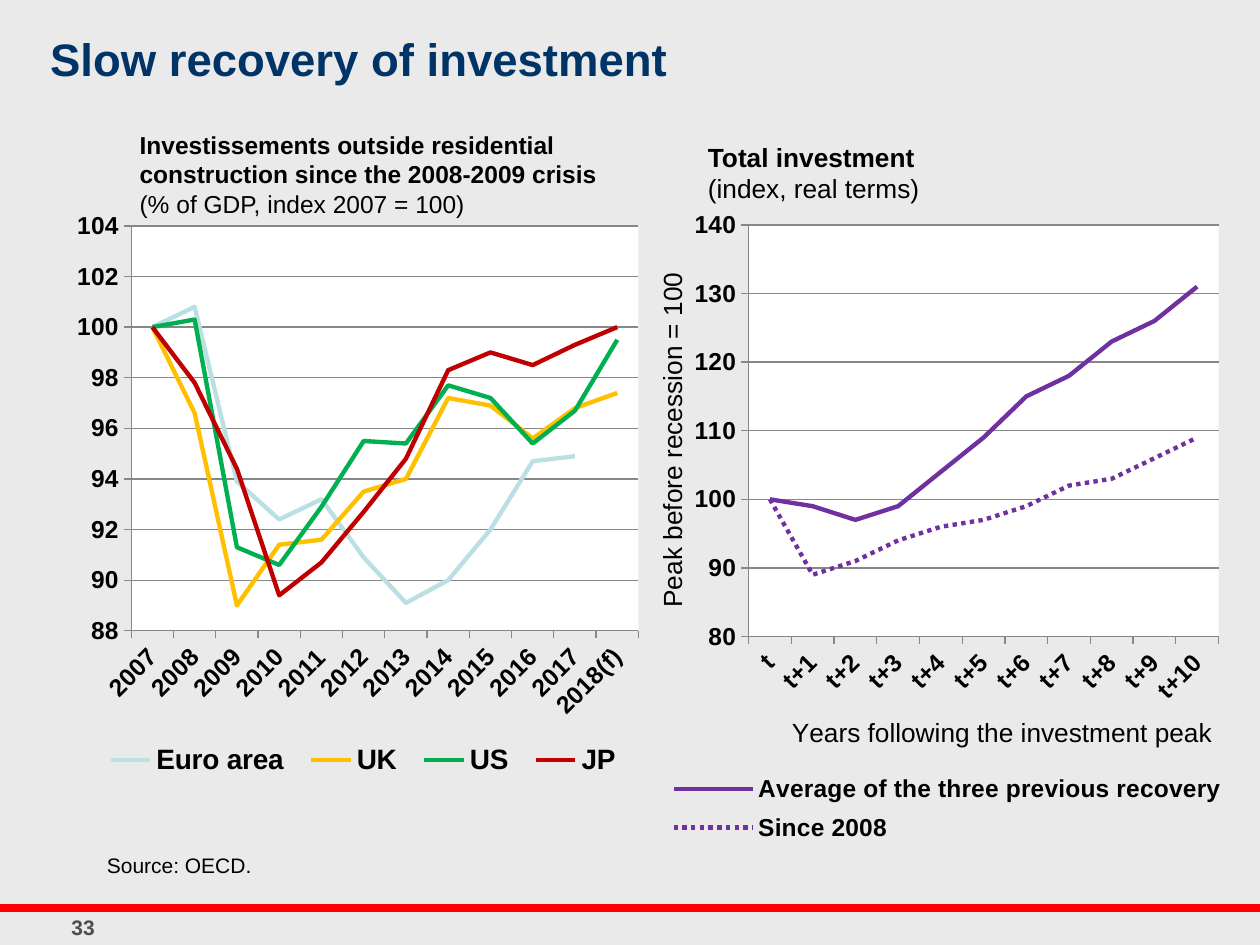
from lxml import etree
from pptx import Presentation
from pptx import util as u
from pptx.chart import data
from pptx.dml import color
from pptx.enum import chart as ch, dml, shapes, text
from pptx.oxml import parse_xml
from pptx.oxml.ns import nsdecls, qn


def rgb(hex_code):
    return color.RGBColor.from_string(hex_code)


def place(part, index, **fractions):
    old = part.find(qn("c:layout"))
    if old is not None:
        part.remove(old)
    layout = etree.Element(qn("c:layout"))
    manual = etree.SubElement(layout, qn("c:manualLayout"))
    settings = {"xMode": "edge", "yMode": "edge", **fractions}
    if part.tag == qn("c:plotArea"):
        settings = {"layoutTarget": "inner", **settings}
    for name, value in settings.items():
        etree.SubElement(manual, qn(f"c:{name}")).set("val", str(value))
    part.insert(index, layout)


class SlideBuilder:
    FONT = "Arial"
    INK = "000000"
    GRID = "878787"

    def __init__(self, slide, background):
        self.slide = slide
        slide.background.fill.solid()
        slide.background.fill.fore_color.rgb = rgb(background)

    def style(self, font, size, bold=False, ink=INK):
        font.name, font.size, font.bold = self.FONT, u.Pt(size), bold
        font.color.rgb = rgb(ink)

    def label(self, box, lines, size, ink=INK, align=text.PP_ALIGN.LEFT,
              anchor=text.MSO_ANCHOR.TOP):
        frame = self.slide.shapes.add_textbox(*map(u.Inches, box)).text_frame
        frame.word_wrap = True
        frame.vertical_anchor = anchor
        for i, (wording, bold) in enumerate(lines):
            paragraph = frame.add_paragraph() if i else frame.paragraphs[0]
            paragraph.text = wording
            paragraph.alignment = align
            self.style(paragraph.font, size, bold, ink)

    def rule(self, y, width, ink):
        line = self.slide.shapes.add_connector(
            shapes.MSO_CONNECTOR.STRAIGHT, 0, u.Inches(y), u.Inches(10), u.Inches(y))
        line.line.color.rgb = rgb(ink)
        line.line.width = u.Pt(width)
        etree.SubElement(line._element.spPr, qn("a:effectLst"))

    def axis_title(self, axis, wording, x, y):
        frame = axis.axis_title.text_frame
        frame.text = wording
        self.style(frame.paragraphs[0].font, 15)
        place(axis.axis_title._element, 1, x=x, y=y)

    def line_chart(self, box, categories, series, scale, plot, legend, legend_size):
        chart_data = data.CategoryChartData()
        chart_data.categories = categories
        for name, _, _, values in series:
            chart_data.add_series(name, values)
        chart = self.slide.shapes.add_chart(
            ch.XL_CHART_TYPE.LINE, *map(u.Inches, box), chart_data).chart
        self.style(chart.font, 10)
        chart.has_title = False
        chart.plots[0].vary_by_categories = False

        for line, (_, ink, dash, _) in zip(chart.plots[0].series, series):
            line.smooth = False
            line.marker.style = ch.XL_MARKER_STYLE.NONE
            line.format.line.color.rgb = rgb(ink)
            line.format.line.width = u.Pt(2.5)
            if dash:
                line.format.line.dash_style = dash

        for axis in (chart.category_axis, chart.value_axis):
            self.style(axis.tick_labels.font, 14, True)
            axis.major_tick_mark = ch.XL_TICK_MARK.OUTSIDE
            axis.format.line.color.rgb = rgb(self.GRID)
        chart.category_axis.tick_labels.offset = 100
        chart.category_axis._element.txPr.bodyPr.set("rot", "-2700000")
        values_axis = chart.value_axis
        values_axis.minimum_scale, values_axis.maximum_scale, values_axis.major_unit = scale
        values_axis.tick_labels.number_format = "0"
        values_axis.tick_labels.number_format_is_linked = False
        values_axis.major_gridlines.format.line.color.rgb = rgb(self.GRID)

        chart.has_legend = True
        chart.legend.position = ch.XL_LEGEND_POSITION.BOTTOM
        chart.legend.include_in_layout = False
        self.style(chart.legend.font, legend_size, True)
        place(chart.legend._element, 1, **dict(zip("xywh", legend)))

        plot_area = chart._chartSpace.chart.plotArea
        place(plot_area, 0, **dict(zip("xywh", plot)))
        plot_area.append(parse_xml(
            f'<c:spPr {nsdecls("c", "a")}><a:solidFill>'
            '<a:srgbClr val="FFFFFF"/></a:solidFill></c:spPr>'))
        return chart


def main():
    deck = Presentation()
    deck.slide_width, deck.slide_height = u.Inches(10), u.Inches(7.5)
    page = SlideBuilder(deck.slides.add_slide(deck.slide_layouts[6]), "EAEAEA")

    page.rule(7.21, 4.5, "FF0000")
    page.label((0.22, 7.21, 0.88, 0.29), [("33", True)], 12, "4D4D4D",
               text.PP_ALIGN.CENTER)
    page.label((0.3, 0.04, 9.4, 0.84), [("Slow recovery of investment", True)], 26,
               "003366", anchor=text.MSO_ANCHOR.MIDDLE)
    page.label((0.75, 6.72, 5.85, 0.3), [("Source: OECD.", False)], 12)

    recoveries = [
        ("Average of the three previous recovery", "7030A0", None,
         [100, 99, 97, 99, 104, 109, 115, 118, 123, 126, 131]),
        ("Since 2008", "7030A0", dml.MSO_LINE.ROUND_DOT,
         [100, 89, 91, 94, 96, 97, 99, 102, 103, 106, 109]),
    ]
    total = page.line_chart(
        (5.07, 1.54, 4.71, 5.33), ["t"] + [f"t+{n}" for n in range(1, 11)], recoveries,
        scale=(80, 140, 10), plot=(0.185, 0.046, 0.792, 0.613),
        legend=(0.04, 0.85, 0.96, 0.13), legend_size=14)
    page.axis_title(total.category_axis, "Years following the investment peak", 0.25, 0.77)
    page.axis_title(total.value_axis, "Peak before recession = 100", 0.02, 0.11)
    page.label((5.52, 1.07, 2.82, 0.61),
               [("Total investment", True), ("(index, real terms)", False)], 15)

    regions = [
        ("Euro area", "BBE0E3", None,
         [100, 100.8, 93.9, 92.4, 93.2, 90.9, 89.1, 90, 92, 94.7, 94.9, None]),
        ("UK", "FFC000", None,
         [100, 96.6, 89, 91.4, 91.6, 93.5, 94, 97.2, 96.9, 95.6, 96.8, 97.4]),
        ("US", "00B050", None,
         [100, 100.3, 91.3, 90.6, 92.9, 95.5, 95.4, 97.7, 97.2, 95.4, 96.7, 99.5]),
        ("JP", "C00000", None,
         [100, 97.8, 94.4, 89.4, 90.7, 92.7, 94.8, 98.3, 99, 98.5, 99.3, 100]),
    ]
    page.line_chart(
        (0.5, 1.67, 4.67, 4.93), [str(year) for year in range(2007, 2018)] + ["2018(f)"],
        regions, scale=(88, 104, 2), plot=(0.116, 0.025, 0.862, 0.652),
        legend=(0.05, 0.84, 0.92, 0.09), legend_size=16)
    page.label((1.01, 0.98, 3.87, 0.81),
               [("Investissements outside residential construction "
                 "since the 2008-2009 crisis", True),
                ("(% of GDP, index 2007 = 100)", False)], 14)

    deck.save("out.pptx")


if __name__ == "__main__":
    main()
